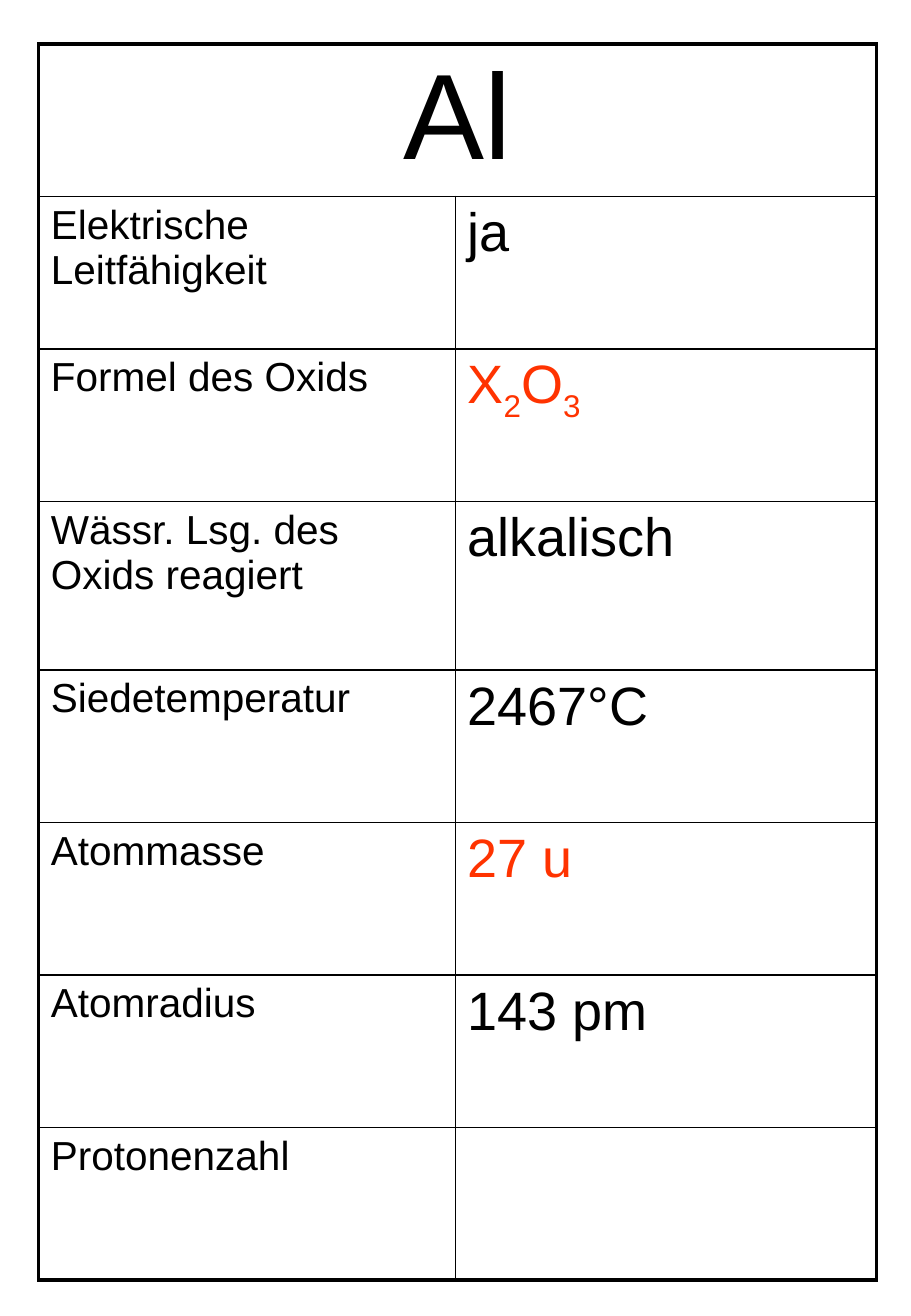
from lxml import etree
from pptx import Presentation
from pptx.enum import text
from pptx.oxml import ns
from pptx.dml.color import RGBColor
from pptx.util import Pt

HUES = {"black": "000000", "red": "FF3300"}
THICK, THIN = 2.25, 1

# label, value runs (text, is subscript), hue of the value
FACTS = [
    ("Elektrische Leitfähigkeit", [("ja", False)], "black"),
    ("Formel des Oxids",
     [("X", False), ("2", True), ("O", False), ("3", True)], "red"),
    ("Wässr. Lsg. des Oxids reagiert", [("alkalisch", False)], "black"),
    ("Siedetemperatur", [("2467°C", False)], "black"),
    ("Atommasse", [("27 u", False)], "red"),
    ("Atomradius", [("143 pm", False)], "black"),
    ("Protonenzahl", [], "black"),
]
HIGH = [90.4, 90.4, 90.4, 100, 90.4, 90.4, 90.4, 90.4]
WIDE = [247, 249.5]


def write(cell, runs, size, hue="black"):
    para = cell.text_frame.paragraphs[0]
    for words, sub in runs:
        run = para.add_run()
        run.text = words
        run.font.name = "Arial"
        run.font.size = Pt(size)
        run.font.color.rgb = RGBColor.from_string(HUES[hue])
        if sub:
            run._r.get_or_add_rPr().set("baseline", "-25000")


def edge(cell, side, width):
    """Draw one black border; side is L, R, T or B."""
    props = cell._tc.get_or_add_tcPr()
    line = etree.SubElement(props, ns.qn("a:ln" + side), w=str(Pt(width)))
    fill = etree.SubElement(line, ns.qn("a:solidFill"))
    etree.SubElement(fill, ns.qn("a:srgbClr"), val=HUES["black"])


deck = Presentation()
deck.slide_width, deck.slide_height = Pt(540), Pt(780)
slide = deck.slides.add_slide(deck.slide_layouts[6])

frame = slide.shapes.add_table(
    len(HIGH), len(WIDE), Pt(23), Pt(26), Pt(sum(WIDE)), Pt(sum(HIGH)))
table = frame.table
table.first_row = table.horz_banding = False
for col, wide in zip(table.columns, WIDE):
    col.width = Pt(wide)
for row, high in zip(table.rows, HIGH):
    row.height = Pt(high)

# Thick outer frame, thin inner grid
last = len(HIGH) - 1
for y in range(len(HIGH)):
    for x in range(len(WIDE)):
        cell = table.cell(y, x)
        outer = {"L": x == 0 or y == 0, "R": x == 1 or y == 0,
                 "T": y == 0, "B": y == last}
        for side, thick in outer.items():
            edge(cell, side, THICK if thick else THIN)
        cell.fill.background()

head = table.cell(0, 0)
head.merge(table.cell(0, 1))
write(head, [("Al", False)], 72)
head.text_frame.paragraphs[0].alignment = text.PP_ALIGN.CENTER

for y, (label, value, hue) in enumerate(FACTS, 1):
    write(table.cell(y, 0), [(label, False)], 24)
    write(table.cell(y, 1), value, 32, hue)

deck.save("out.pptx")
